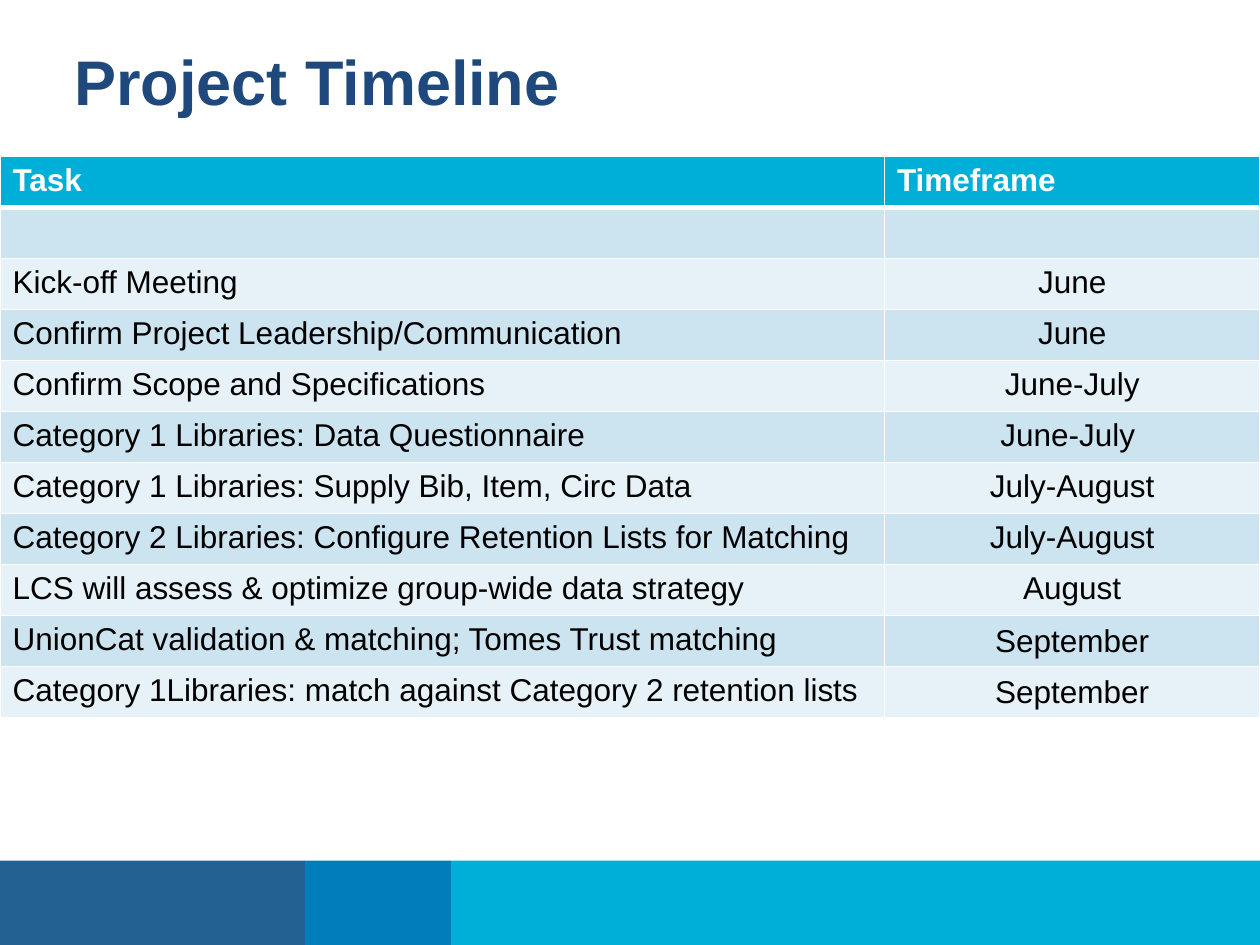
import pptx
import pptx.dml.color
import pptx.enum.shapes
import pptx.enum.text
import pptx.oxml
import pptx.oxml.ns
import pptx.util
from pptx.util import Inches

TITLE = "Project Timeline"
HEADER = ("Task", "Timeframe")
TASKS = [
    ("", ""),
    ("Kick-off Meeting", "June"),
    ("Confirm Project Leadership/Communication", "June"),
    ("Confirm Scope and Specifications", "June-July"),
    ("Category 1 Libraries: Data Questionnaire", "June-July "),
    ("Category 1 Libraries: Supply Bib, Item, Circ Data", "July-August"),
    ("Category 2 Libraries: Configure Retention Lists for Matching", "July-August"),
    ("LCS will assess & optimize group-wide data strategy", "August"),
    ("UnionCat validation & matching; Tomes Trust matching", "September"),
    ("Category 1Libraries: match against Category 2 retention lists", "September"),
]
FOOTER_BANDS = [(2.42, "236192"), (1.16, "007DBA"), (6.42, "00AFD7")]
COLUMN_WIDTHS = (7.02, 2.98)
TABLE_TOP, TABLE_HEIGHT = 1.24, 4.46
HEADER_FILL, ROW_FILLS = "00AFD7", ("CCE3F0", "E7F2F8")


def color(value):
    return pptx.dml.color.RGBColor.from_string(value)


def style(font, size, value, bold=False):
    font.name = "Arial"
    font.size = pptx.util.Pt(size)
    font.bold = bold
    font.color.rgb = color(value)


def set_borders(cell, bottom):
    """Draw white cell borders; the bottom one has its own width in points."""
    properties = cell._tc.get_or_add_tcPr()
    sides = (("lnL", 1), ("lnR", 1), ("lnT", 1), ("lnB", bottom))
    for position, (tag, width) in enumerate(sides):
        line = pptx.oxml.parse_xml(
            f'<a:{tag} {pptx.oxml.ns.nsdecls("a")} w="{pptx.util.Pt(width)}">'
            '<a:solidFill><a:srgbClr val="FFFFFF"/></a:solidFill>'
            f'</a:{tag}>')
        properties.insert(position, line)


deck = pptx.Presentation()
deck.slide_width, deck.slide_height = Inches(10), Inches(7.5)
page = deck.slides.add_slide(deck.slide_layouts[6])

# Footer bands, laid side by side
left = 0
for width, fill in FOOTER_BANDS:
    band = page.shapes.add_shape(
        pptx.enum.shapes.MSO_SHAPE.RECTANGLE,
        Inches(left), Inches(6.83), Inches(width), Inches(0.67))
    band.shadow.inherit = False
    band.fill.solid()
    band.fill.fore_color.rgb = color(fill)
    band.line.fill.background()
    left += width

# Title
box = page.shapes.add_textbox(Inches(0.52), Inches(0.24), Inches(8.95), Inches(1))
box.text_frame.word_wrap = True
box.text_frame.margin_left = Inches(0.07)
box.text_frame.margin_top = Inches(0.1)
span = box.text_frame.paragraphs[0].add_run()
span.text = TITLE
style(span.font, 36, "1F497D", bold=True)

# Timeline table
rows = [HEADER] + TASKS
table = page.shapes.add_table(
    len(rows), len(HEADER), 0, Inches(TABLE_TOP), Inches(10), Inches(TABLE_HEIGHT)).table
for column, width in zip(table.columns, COLUMN_WIDTHS):
    column.width = Inches(width)
for row_index, row in enumerate(rows):
    is_header = row_index == 0
    table.rows[row_index].height = Inches(TABLE_HEIGHT / len(rows))
    for column_index, text in enumerate(row):
        cell = table.cell(row_index, column_index)
        cell.fill.solid()
        cell.fill.fore_color.rgb = color(
            HEADER_FILL if is_header else ROW_FILLS[(row_index - 1) % 2])
        set_borders(cell, 3 if is_header else 1)
        para = cell.text_frame.paragraphs[0]
        if column_index == 1 and not is_header:
            para.alignment = pptx.enum.text.PP_ALIGN.CENTER
        if text == "September":
            cell.vertical_anchor = pptx.enum.text.MSO_ANCHOR.MIDDLE
        if text:
            span = para.add_run()
            span.text = text
            style(span.font, 18, "FFFFFF" if is_header else "000000", is_header)
        else:
            para.font.size = pptx.util.Pt(18)

deck.save("out.pptx")
